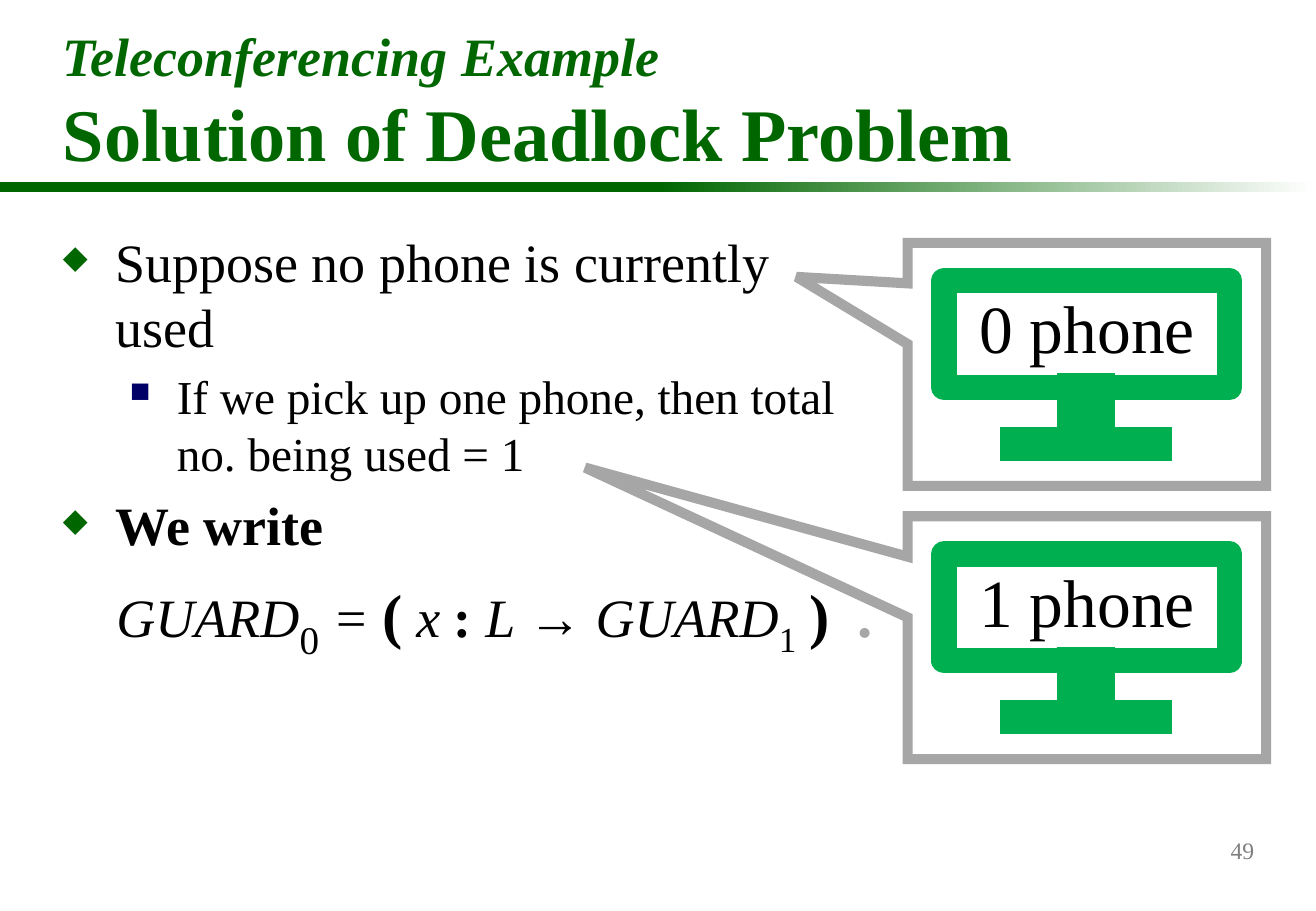
import dataclasses

import lxml.etree
import pptx
import pptx.dml.color
import pptx.enum.shapes
import pptx.enum.text
import pptx.oxml.ns
import pptx.util

Pt = pptx.util.Pt
SHAPE = pptx.enum.shapes.MSO_SHAPE
ALIGN = pptx.enum.text.PP_ALIGN
ANCHOR = pptx.enum.text.MSO_ANCHOR


@dataclasses.dataclass(frozen=True)
class Theme:
    font: str = "Times New Roman"
    green: str = "006600"
    screen: str = "00B050"
    navy: str = "000066"
    gray: str = "A6A6A6"
    page: str = "808080"
    black: str = "000000"
    white: str = "FFFFFF"
    title: int = 44
    label: int = 40
    paren: int = 36
    body: int = 32
    sub: int = 28
    small: int = 14


def color(code):
    return pptx.dml.color.RGBColor.from_string(code)


def child(parent, tag, **attrs):
    return lxml.etree.SubElement(parent, pptx.oxml.ns.qn(tag), attrs)


class Deck:
    def __init__(self, theme, width, height):
        self.theme = theme
        self.file = pptx.Presentation()
        self.file.slide_width, self.file.slide_height = Pt(width), Pt(height)
        self.slide = self.file.slides.add_slide(self.file.slide_layouts[6])

    def shape(self, kind, box, fill=None, line=None, width=1, join="a:round"):
        item = self.slide.shapes.add_shape(kind, *map(Pt, box))
        item.shadow.inherit = False
        if fill:
            item.fill.solid()
            item.fill.fore_color.rgb = color(fill)
        else:
            item.fill.background()
        if line:
            item.line.color.rgb = color(line)
            item.line.width = Pt(width)
            edge = child(item.line._get_or_add_ln(), join)
            if join == "a:miter":
                edge.set("lim", "800000")
        else:
            item.line.fill.background()
        return item

    def fade(self, box, start, end):
        item = self.shape(SHAPE.RECTANGLE, box, start)
        item.fill.gradient()
        item.fill.gradient_angle = 0
        for stop, code in zip(item.fill.gradient_stops, (start, end)):
            stop.color.rgb = color(code)

    def text(self, box, words="", anchor=ANCHOR.TOP, wrap=True):
        frame = self.slide.shapes.add_textbox(*map(Pt, box)).text_frame
        frame.word_wrap = wrap
        frame.vertical_anchor = anchor
        frame.text = words
        return frame

    def style(self, run, size, code=None, bold=False, italic=False, base=0):
        font = run.font
        font.name, font.size = self.theme.font, Pt(size)
        font.bold, font.italic = bold, italic
        font.color.rgb = color(code or self.theme.black)
        if base:
            run._r.get_or_add_rPr().set("baseline", str(base * 1000))

    def line(self, box, words, size, code=None, **place):
        """Add a box holding one right-aligned line."""
        para = self.text(box, words, **place).paragraphs[0]
        para.alignment = ALIGN.RIGHT
        self.style(para.runs[0], size, code)

    def indent(self, para, left, hang=0, mark=None, code=None, tab=None):
        """Set the margin, space before, bullet and tab stop of a paragraph."""
        props = para._p.get_or_add_pPr()
        props.set("marL", str(Pt(left)))
        props.set("indent", str(-Pt(hang)))
        child(child(props, "a:spcBef"), "a:spcPct", val="20000")
        if mark:
            child(child(props, "a:buClr"), "a:srgbClr", val=code)
            child(props, "a:buSzPct", val="60000")
            child(props, "a:buChar", char=mark)
        if tab:
            child(child(props, "a:tabLst"), "a:tab", pos=str(Pt(tab)), algn="l")

    def phone(self, top, words, tip):
        """Draw a callout with a monitor that shows the words."""
        green = self.theme.screen
        call = self.shape(SHAPE.RECTANGULAR_CALLOUT, (537.8, top, 212.4, 144),
                          line=self.theme.gray, width=6, join="a:miter")
        call.adjustments[0], call.adjustments[1] = tip
        self.shape(SHAPE.RECTANGLE, (559.4, top + 22.3, 169.2, 63.4),
                   line=green, width=15)
        neck = (627.1, top + 77.8, 33.1, 46.8)
        foot = (593.3, top + 109.4, 100.8, 19.4)
        for box in (neck, foot):
            self.shape(SHAPE.RECTANGLE, box, green, green, join="a:miter")
        self.line((571.7, top + 22.3, 143.3, 55.4), words, self.theme.label,
                  wrap=False)


def main():
    look = Theme()
    deck = Deck(look, 779.76, 540)
    deck.shape(SHAPE.RECTANGLE, (0, 108, 390, 5.76), look.green)
    deck.fade((389.76, 108, 390, 5.76), look.green, look.white)
    deck.line((587.5, 486, 162.7, 36), "49", look.small, look.page,
              anchor=ANCHOR.MIDDLE)

    title = deck.text((30.2, 20.9, 720, 87.1),
                      "Teleconferencing Example\nSolution of Deadlock Problem",
                      ANCHOR.BOTTOM)
    for para, size, slant in zip(title.paragraphs, (look.body, look.title),
                                 (True, False)):
        deck.style(para.runs[0], size, look.green, bold=True, italic=slant)

    body = deck.text((30.2, 131.8, 504, 252))
    top = (31, 31, "◆", look.green)
    sub = (67.5, 28, "■", look.navy)
    points = [
        ("Suppose no phone is currently \tused", top, look.body, False, 468.7),
        ("If we pick up one phone, then total no. being used = 1",
         sub, look.sub, False, None),
        ("We write", top, look.body, True, None),
    ]
    for index, (words, form, size, bold, tab) in enumerate(points):
        para = body.add_paragraph() if index else body.paragraphs[0]
        para.text = words
        para.level = int(form is sub)
        deck.indent(para, *form, tab=tab)
        deck.style(para.runs[0], size, bold=bold)

    ital, bold = {"italic": True}, {"bold": True}
    low = {"base": -25}
    guard = [
        ("GUARD", look.body, ital), ("0", look.label, low),
        (" = ", look.body, ital), ("(", look.paren, bold),
        (" x ", look.body, ital), (":", look.body, bold),
        (" L ", look.body, ital), ("→", look.body, bold),
        (" GUARD", look.body, ital), ("1", look.paren, low),
        (" ", look.body, ital), (")", look.paren, bold),
        ("  ", look.body, bold),
        (".", look.paren, {"bold": True, "code": look.gray}),
    ]
    para = body.add_paragraph()
    deck.indent(para, 31.7)
    for words, size, form in guard:
        run = para.add_run()
        run.text = words
        deck.style(run, size, **form)

    tips = [(-0.81, -0.36), (-1.4, -0.7)]
    for index, tip in enumerate(tips):
        deck.phone(144 + 162 * index, f"{index} phone", tip)
    deck.file.save("out.pptx")


if __name__ == "__main__":
    main()
